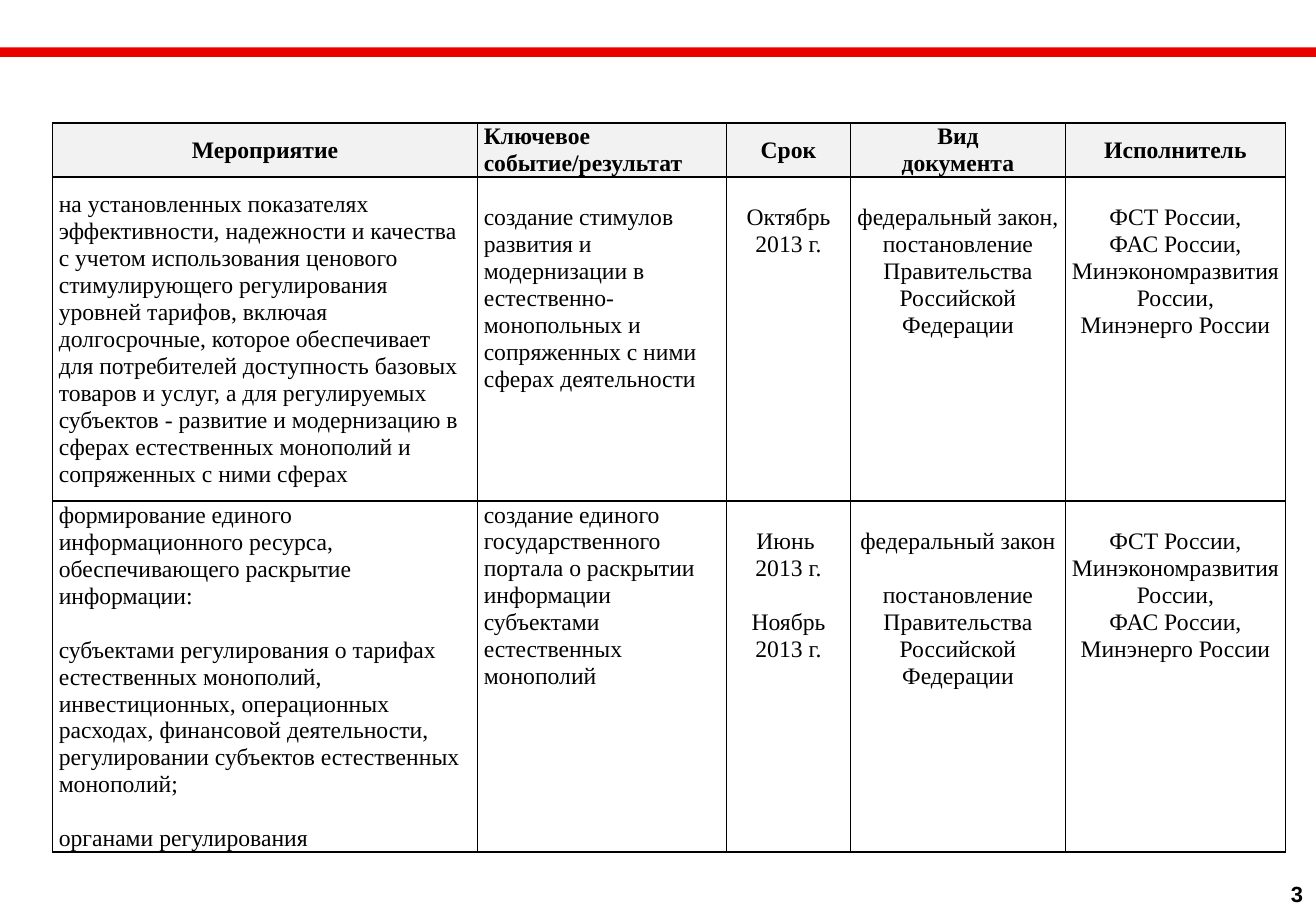
from lxml import etree
from pptx import Presentation
from pptx.dml.color import RGBColor
from pptx.enum.shapes import MSO_SHAPE
from pptx.enum.text import MSO_ANCHOR, PP_ALIGN
from pptx.oxml.ns import qn
from pptx.util import Cm, Pt

RECTANGLE = MSO_SHAPE.RECTANGLE
TOP, MIDDLE = MSO_ANCHOR.TOP, MSO_ANCHOR.MIDDLE
LEFT, CENTER = PP_ALIGN.LEFT, PP_ALIGN.CENTER

COLOURS = {"stripe": "EB0000", "header": "F2F2F2", "text": "000000", "border": "000000"}
HEADER_FONT = {"name": "Times New Roman", "size": Pt(14), "bold": True}
BODY_FONT = {"name": "Times New Roman", "size": Pt(14), "bold": False}
NUMBER_FONT = {"name": "Arial", "size": Pt(13), "bold": True}
LINE_HEIGHT = Pt(16)

COLUMN_WIDTHS = [8.89, 5.21, 2.59, 4.5, 4.6]
ROW_HEIGHTS = [1.13, 6.78, 7.34]
COLUMN_ALIGNMENTS = [LEFT, LEFT, CENTER, CENTER, CENTER]
COLUMN_ANCHORS = [MIDDLE, TOP, TOP, TOP, TOP]
HEADER_ALIGNMENTS = [CENTER, LEFT, CENTER, CENTER, CENTER]

HEADERS = [
    ["Мероприятие"],
    ["Ключевое событие/результат"],
    ["Срок"],
    ["Вид", "документа"],
    ["Исполнитель"],
]
# Each body cell is a list of blocks set one line apart.
MEASURES = [
    [
        [["на установленных показателях эффективности, надежности и качества с учетом "
          "использования ценового стимулирующего регулирования уровней тарифов, включая "
          "долгосрочные, которое обеспечивает для потребителей доступность базовых товаров "
          "и услуг, а для регулируемых субъектов - развитие и модернизацию в сферах "
          "естественных монополий и сопряженных с ними сферах"]],
        [["создание стимулов развития и модернизации в естественно-монопольных и "
          "сопряженных с ними сферах деятельности"]],
        [["Октябрь", "2013 г."]],
        [["федеральный закон,", "постановление Правительства Российской Федерации"]],
        [["ФСТ России,", "ФАС России,", "Минэкономразвития России,", "Минэнерго России"]],
    ],
    [
        [["формирование единого информационного ресурса, обеспечивающего раскрытие "
          "информации:"],
         ["субъектами регулирования о тарифах естественных монополий, инвестиционных, "
          "операционных расходах, финансовой деятельности, регулировании субъектов "
          "естественных монополий;"],
         ["органами регулирования"]],
        [["создание единого государственного портала о раскрытии информации субъектами "
          "естественных монополий"]],
        [["Июнь ", "2013 г."], ["Ноябрь 2013 г."]],
        [["федеральный закон"], ["постановление Правительства Российской Федерации"]],
        [["ФСТ России,", "Минэкономразвития России,", "ФАС России,", "Минэнерго России"]],
    ],
]
LOWERED_COLUMNS = [{1, 2, 3, 4}, {2, 3, 4}]


def colour(name):
    """Return the palette colour of that name."""
    return RGBColor.from_string(COLOURS[name])


def apply_format(target, values):
    """Set each attribute of the target from a dict."""
    for name, value in values.items():
        setattr(target, name, value)


def set_font(paragraph, font):
    """Give a paragraph its font and the text colour."""
    apply_format(paragraph.font, font)
    paragraph.font.color.rgb = colour("text")


def add_borders(cell):
    """Draw a thin line on all four sides of a cell."""
    properties = cell._tc.get_or_add_tcPr()
    for side in ("lnL", "lnR", "lnT", "lnB"):
        line = etree.SubElement(properties, qn(f"a:{side}"), w=str(Pt(1)))
        fill = etree.SubElement(line, qn("a:solidFill"))
        etree.SubElement(fill, qn("a:srgbClr"), val=COLOURS["border"])


def fill_cell(cell, blocks, font, alignment, anchor, lowered=False):
    """Write blocks of paragraphs into a cell, one blank line's height apart."""
    apply_format(cell, {
        "margin_left": Cm(0.13), "margin_right": Cm(0.13),
        "margin_top": LINE_HEIGHT if lowered else 0, "margin_bottom": 0,
        "vertical_anchor": anchor,
    })
    lines = [(block_index, line_index, line)
             for block_index, block in enumerate(blocks)
             for line_index, line in enumerate(block)]
    frame = cell.text_frame
    for index, (block_index, line_index, line) in enumerate(lines):
        paragraph = frame.add_paragraph() if index else frame.paragraphs[0]
        paragraph.text = line
        starts_block = block_index > 0 and line_index == 0
        apply_format(paragraph, {
            "alignment": alignment, "line_spacing": LINE_HEIGHT,
            "space_before": LINE_HEIGHT if starts_block else Pt(0),
        })
        set_font(paragraph, font)
    add_borders(cell)


def add_stripe(slide, width):
    """Add the red stripe across the top of the slide."""
    stripe = slide.shapes.add_shape(RECTANGLE, 0, Cm(0.99), width, Cm(0.2))
    stripe.shadow.inherit = False
    stripe.fill.solid()
    stripe.fill.fore_color.rgb = colour("stripe")
    stripe.line.fill.background()


def add_measures_table(slide):
    """Add the table of measures, deadlines and responsible bodies."""
    table = slide.shapes.add_table(
        len(ROW_HEIGHTS), len(COLUMN_WIDTHS), Cm(1.1), Cm(2.57),
        Cm(sum(COLUMN_WIDTHS)), Cm(sum(ROW_HEIGHTS))).table
    apply_format(table, {"first_row": False, "horz_banding": False})
    for column, width in zip(table.columns, COLUMN_WIDTHS):
        column.width = Cm(width)
    for row, height in zip(table.rows, ROW_HEIGHTS):
        row.height = Cm(height)
    for index, lines in enumerate(HEADERS):
        cell = table.cell(0, index)
        fill_cell(cell, [lines], HEADER_FONT, HEADER_ALIGNMENTS[index], MIDDLE)
        cell.fill.solid()
        cell.fill.fore_color.rgb = colour("header")
    for row_index, measure in enumerate(MEASURES):
        for index, blocks in enumerate(measure):
            cell = table.cell(row_index + 1, index)
            fill_cell(cell, blocks, BODY_FONT, COLUMN_ALIGNMENTS[index],
                      COLUMN_ANCHORS[index], index in LOWERED_COLUMNS[row_index])
            cell.fill.background()


def add_page_number(slide, number):
    """Add the page number in the bottom right corner."""
    box = slide.shapes.add_textbox(Cm(26.74), Cm(18.28), Cm(0.79), Cm(0.81))
    box.text_frame.word_wrap = False
    paragraph = box.text_frame.paragraphs[0]
    paragraph.text = number
    paragraph.alignment = CENTER
    set_font(paragraph, NUMBER_FONT)


def main():
    """Build the slide and save the presentation."""
    presentation = Presentation()
    apply_format(presentation, {"slide_width": Cm(27.53), "slide_height": Cm(19.05)})
    slide = presentation.slides.add_slide(presentation.slide_layouts.get_by_name("Blank"))
    add_stripe(slide, presentation.slide_width)
    add_measures_table(slide)
    add_page_number(slide, "3")
    presentation.save("out.pptx")


if __name__ == "__main__":
    main()
